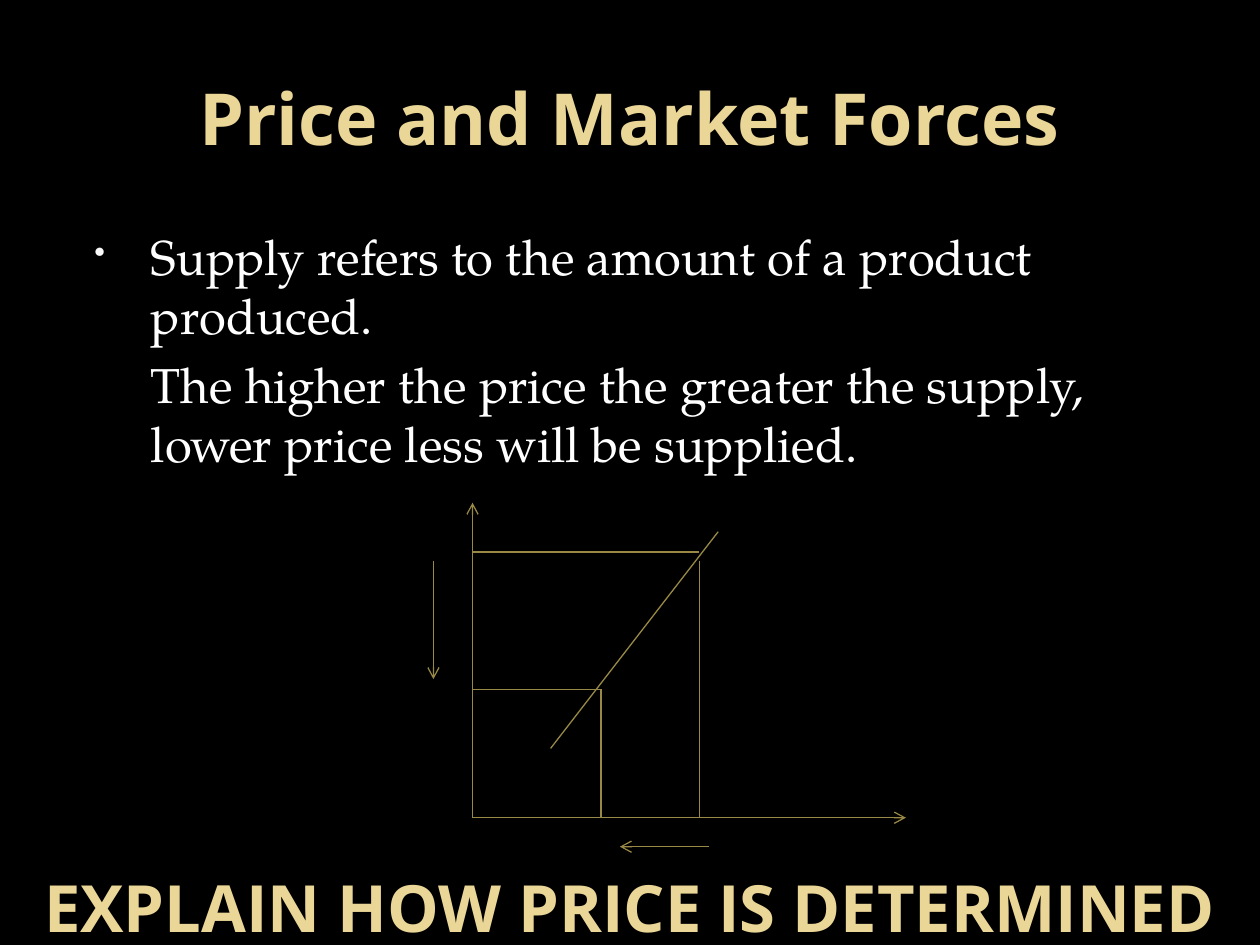
import pptx
import pptx.util
import pptx.dml.color
import pptx.enum.shapes
import pptx.enum.text
import pptx.oxml.ns
import lxml.etree

Inches, Pt = pptx.util.Inches, pptx.util.Pt
ALIGN, ANCHOR = pptx.enum.text.PP_ALIGN, pptx.enum.text.MSO_ANCHOR
GOLD, WHITE, LINE = "EAD696", "FFFFFF", "998946"

# Content
TITLE = "Price and Market Forces"
BODY = [
    "Supply refers to the amount of a product produced.",
    "The higher the price the greater the supply, lower price less will be supplied.",
]
FOOTER = "EXPLAIN HOW PRICE IS DETERMINED"

# Diagram levels: price on the vertical axis, quantity on the horizontal axis
ORIGIN_X, ORIGIN_Y = 3.75, 6.49
LOW_QUANTITY, HIGH_QUANTITY = 4.77, 5.55
LOW_PRICE, HIGH_PRICE = 5.47, 4.38
DIAGRAM = [  # start, end, has arrowhead
    ((ORIGIN_X, ORIGIN_Y), (ORIGIN_X, 3.99), True),  # price axis
    ((ORIGIN_X, ORIGIN_Y), (7.19, ORIGIN_Y), True),  # quantity axis
    ((4.37, 5.94), (5.7, 4.22), False),  # supply curve
    ((ORIGIN_X, HIGH_PRICE), (HIGH_QUANTITY, HIGH_PRICE), False),
    ((HIGH_QUANTITY, 4.45), (HIGH_QUANTITY, ORIGIN_Y), False),
    ((ORIGIN_X, LOW_PRICE), (LOW_QUANTITY, LOW_PRICE), False),
    ((LOW_QUANTITY, LOW_PRICE), (LOW_QUANTITY, ORIGIN_Y), False),
    ((3.44, 4.45), (3.44, 5.39), True),  # price falls
    ((5.63, 6.72), (4.92, 6.72), True),  # supply falls
]


def color(value):
    return pptx.dml.color.RGBColor.from_string(value)


def add_xml(parent, tag, **attributes):
    return lxml.etree.SubElement(parent, pptx.oxml.ns.qn(tag), attributes)


def add_text(slide, box, lines, size, font, fill, bold=False, align=ALIGN.LEFT,
             anchor=ANCHOR.TOP, margins=(0.1, 0.05)):
    shape = slide.shapes.add_textbox(*map(Inches, box))
    frame = shape.text_frame
    frame.text = "\n".join(lines)
    frame.word_wrap = True
    frame.vertical_anchor = anchor
    frame.margin_left = frame.margin_right = Inches(margins[0])
    frame.margin_top = frame.margin_bottom = Inches(margins[1])
    for paragraph in frame.paragraphs:
        paragraph.alignment = align
        for run in paragraph.runs:
            run.font.size, run.font.name, run.font.bold = Pt(size), font, bold
            run.font.color.rgb = color(fill)
    return frame.paragraphs


def add_line(slide, start, end, arrow):
    connector = slide.shapes.add_connector(
        pptx.enum.shapes.MSO_CONNECTOR.STRAIGHT, *map(Inches, start + end))
    connector.line.color.rgb = color(LINE)
    connector.line.width = Pt(0.75)
    if arrow:
        add_xml(connector.line._get_or_add_ln(), "a:tailEnd", type="arrow")
    add_xml(connector._element.spPr, "a:effectLst")


presentation = pptx.Presentation()
presentation.slide_width, presentation.slide_height = Inches(10), Inches(7.5)
slide = presentation.slides.add_slide(presentation.slide_layouts[6])
slide.background.fill.solid()
slide.background.fill.fore_color.rgb = color("000000")

# Title
add_text(slide, (0.5, 0.3, 9, 1.25), [TITLE], 41, "Open Sans", GOLD, True,
         ALIGN.CENTER, ANCHOR.MIDDLE)

# Body: a bulleted statement, then a continuation with the same indent
body = add_text(slide, (0.5, 1.75, 9, 5.15), BODY, 28, "TeX Gyre Pagella", WHITE)
for paragraph in body:
    paragraph.space_before = Pt(5.6)
    paragraph._p.get_or_add_pPr().set("marL", str(Inches(0.6)))
bullet = body[0]._p.get_or_add_pPr()
bullet.set("indent", str(Inches(-0.45)))
add_xml(add_xml(bullet, "a:buClr"), "a:srgbClr", val="F9F9F9")
add_xml(bullet, "a:buSzPct", val="65000")
add_xml(bullet, "a:buChar", char="•")

# Supply diagram
for start, end, arrow in DIAGRAM:
    add_line(slide, start, end, arrow)

# Footer
footer = add_text(slide, (0, 6.56, 10, 0.94), [FOOTER], 37.2, "Open Sans", GOLD, True,
                  ALIGN.CENTER, ANCHOR.BOTTOM, (0.05, 0))
footer[0].line_spacing = 0.8

presentation.save("out.pptx")
